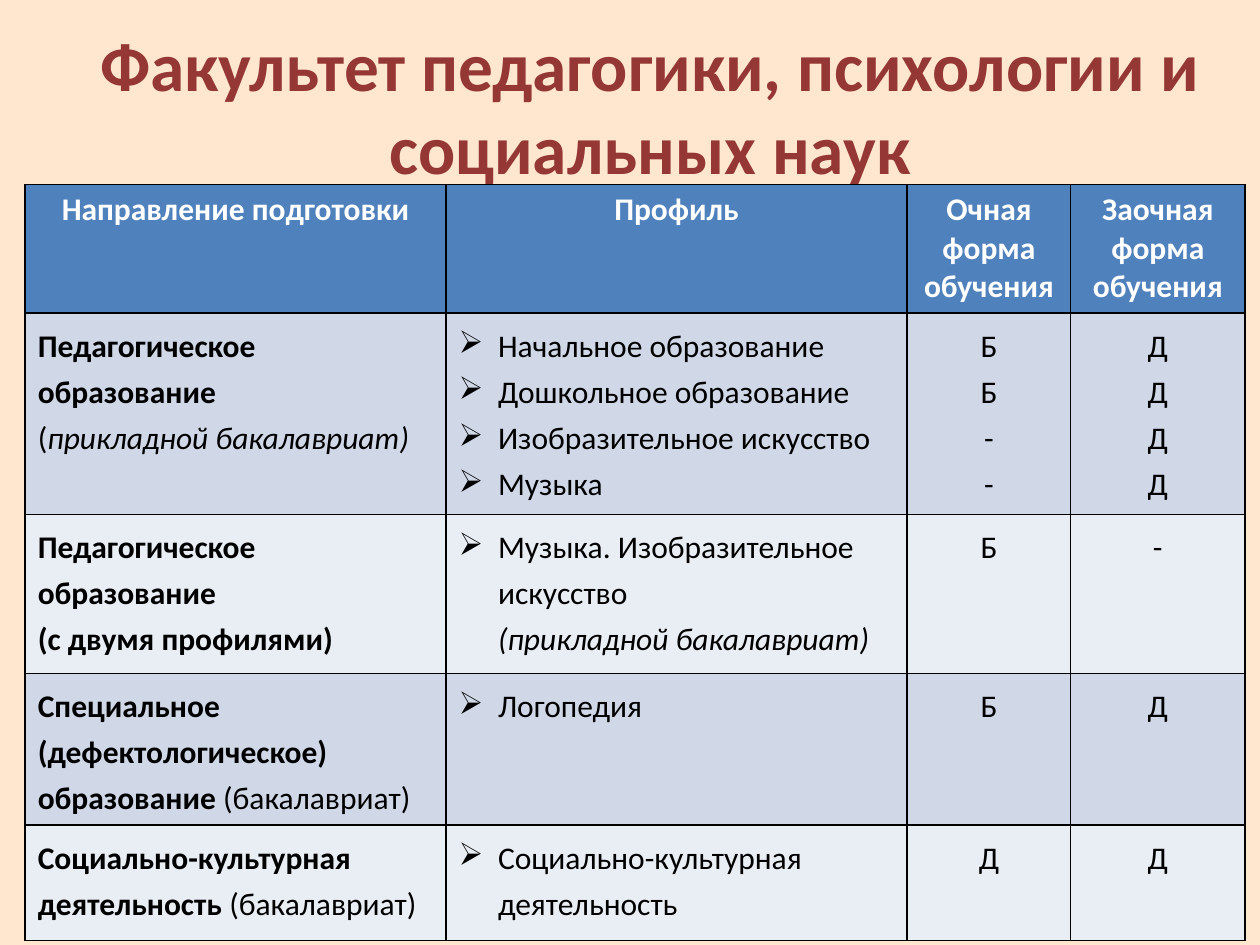
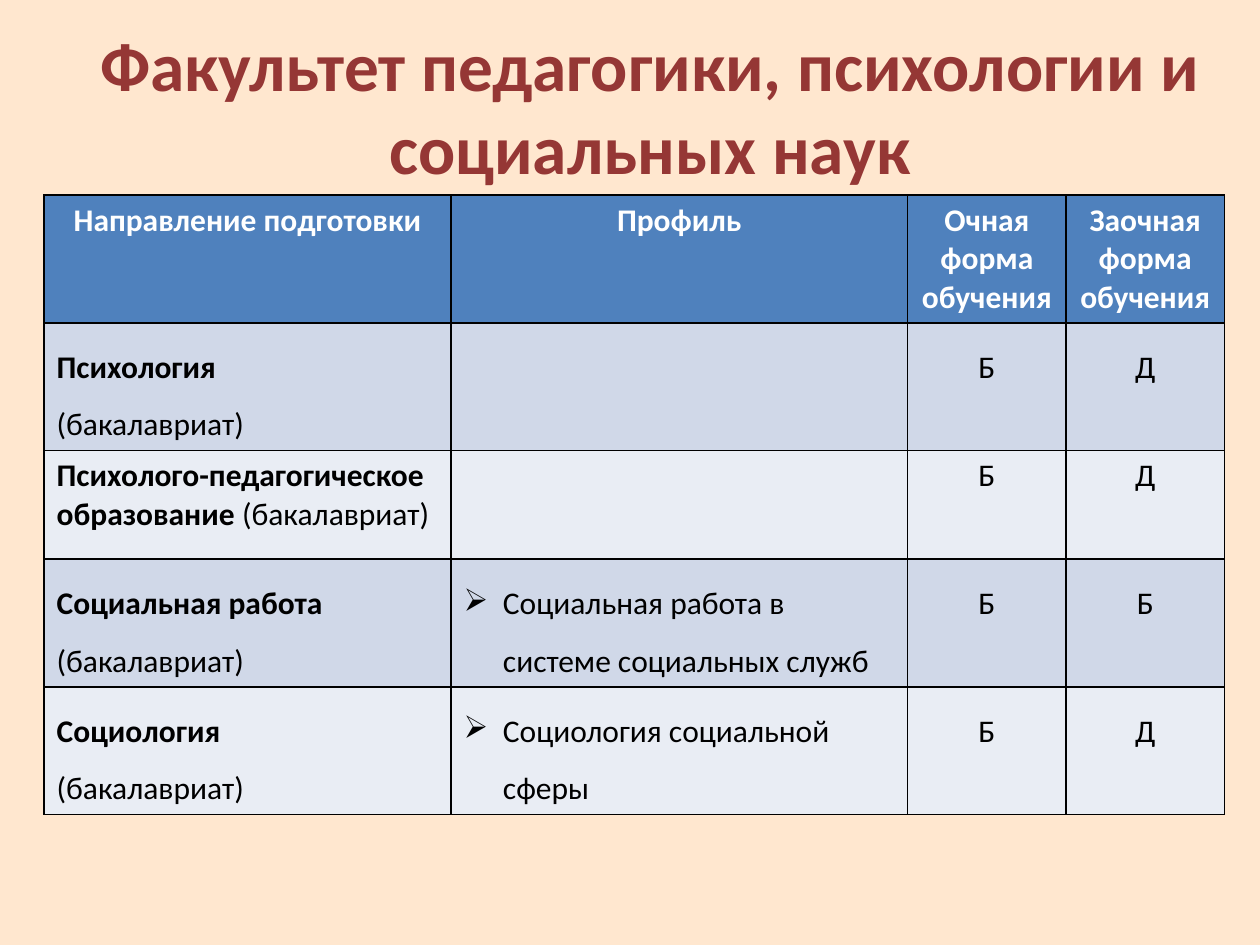
"""Build two slides listing the programmes of a faculty."""
from lxml.etree import SubElement as Sub
from pptx import Presentation
from pptx.dml.color import RGBColor
from pptx.enum.text import MSO_ANCHOR as Anchor, PP_ALIGN as Align
from pptx.oxml.ns import qn
from pptx.util import Pt

PAPER, WINE, BLUE = "FFE7CF", "953735", "4F81BD"
BANDS = ["D0D8E8", "E9EDF4"]
TITLE = "Факультет педагогики, психологии и социальных наук"
HEADS = ["Направление подготовки", "Профиль", "Очная форма обучения", "Заочная форма обучения"]
DEGREE = ("(бакалавриат)", "")

# Each row: line spacing, course paragraphs of (text, style) runs, profiles, full-time, part-time.
PAGES = [
    {
        "left": 14.4, "top": 105.5,
        "cols": [240.5, 263.5, 93.5, 99.5],
        "rows": [73.5, 115, 91, 86.5, 66],
        "body": [
            (1.2, [[("Педагогическое образование", "b")],
                   [("(", ""), ("прикладной бакалавриат)", "i")]],
             [[("Начальное образование", "")], [("Дошкольное образование", "")],
              [("Изобразительное искусство", "")], [("Музыка", "")]],
             "ББ--", "ДДДД"),
            (1.2, [[("Педагогическое образование", "b")], [("(с двумя профилями)", "b")]],
             [[("Музыка. Изобразительное искусство", ""), ("\n", ""),
               ("(прикладной бакалавриат)", "i")]],
             "Б", "-"),
            (1.2, [[("Специальное (дефектологическое) образование ", "b"), DEGREE]],
             [[("Логопедия", "")]], "Б", "Д"),
            (1.2, [[("Социально-культурная деятельность ", "b"), DEGREE]],
             [[("Социально-культурная деятельность", "")]], "Д", "Д"),
        ],
    },
    {
        "left": 25.2, "top": 111.5,
        "cols": [232.5, 261, 90.5, 90.5],
        "rows": [73, 73, 62, 73, 73],
        "body": [
            (1.5, [[("Психология", "b")], [DEGREE]], [], "Б", "Д"),
            (1.0, [[("Психолого-педагогическое образование ", "b"), DEGREE]], [], "Б", "Д"),
            (1.5, [[("Социальная работа", "b")], [DEGREE]],
             [[("Социальная работа в системе социальных служб", "")]], "Б", "Б"),
            (1.5, [[("Социология", "b")], [DEGREE]],
             [[("Социология социальной сферы", "")]], "Б", "Д"),
        ],
    },
]


def tint(code):
    return RGBColor.from_string(code)


def fill_cell(cell, paras, color, back, space, center=False, bullet=False):
    props = cell._tc.get_or_add_tcPr()
    for side in ["lnL", "lnR", "lnT", "lnB"]:
        edge = Sub(props, qn("a:" + side), w=str(Pt(1)))
        Sub(Sub(edge, qn("a:solidFill")), qn("a:srgbClr"), val="000000")
    cell.fill.solid()
    cell.fill.fore_color.rgb = tint(back)
    frame = cell.text_frame
    for i, runs in enumerate(paras):
        para = frame.add_paragraph() if i else frame.paragraphs[0]
        if bullet:
            form = para._p.get_or_add_pPr()
            form.set("marL", str(Pt(22.5)))
            form.set("indent", str(-Pt(22.5)))
            Sub(form, qn("a:buChar"), char="➢")
        para.alignment = Align.CENTER if center else Align.LEFT
        para.line_spacing = space
        para.font.name, para.font.size = "Calibri", Pt(18)
        para.font.color.rgb = tint(color)
        for text, style in runs:
            if text == "\n":
                para.add_line_break()
                continue
            run = para.add_run()
            run.text = text
            font = para.font if len(runs) == 1 else run.font
            font.bold, font.italic = style == "b", style == "i"


deck = Presentation()
deck.slide_width, deck.slide_height = Pt(720), Pt(540)

for page in PAGES:
    slide = deck.slides.add_slide(deck.slide_layouts[6])
    slide.background.fill.solid()
    slide.background.fill.fore_color.rgb = tint(PAPER)

    frame = slide.shapes.add_textbox(Pt(36.7), Pt(15.1), Pt(669.6), Pt(90)).text_frame
    frame.word_wrap = True
    frame.vertical_anchor = Anchor.MIDDLE
    title = frame.paragraphs[0]
    title.text = TITLE
    title.alignment = Align.CENTER
    title.font.name, title.font.size, title.font.bold = "Calibri", Pt(39.6), True
    title.font.color.rgb = tint(WINE)

    cols, rows = page["cols"], page["rows"]
    table = slide.shapes.add_table(len(rows), len(cols), Pt(page["left"]), Pt(page["top"]),
                                   Pt(sum(cols)), Pt(sum(rows))).table
    for col, width in zip(table.columns, cols):
        col.width = Pt(width)
    for row, height in zip(table.rows, rows):
        row.height = Pt(height)

    for c, head in enumerate(HEADS):
        fill_cell(table.cell(0, c), [[(head, "b")]], "FFFFFF", BLUE, 1.0, center=True)
    for r, (space, course, themes, *forms) in enumerate(page["body"], 1):
        back = BANDS[(r - 1) % 2]
        fill_cell(table.cell(r, 0), course, "000000", back, space)
        fill_cell(table.cell(r, 1), themes, "000000", back, space, bullet=True)
        for c, marks in enumerate(forms, 2):
            fill_cell(table.cell(r, c), [[(mark, "")] for mark in marks],
                      "000000", back, space, center=True)

deck.save("out.pptx")
